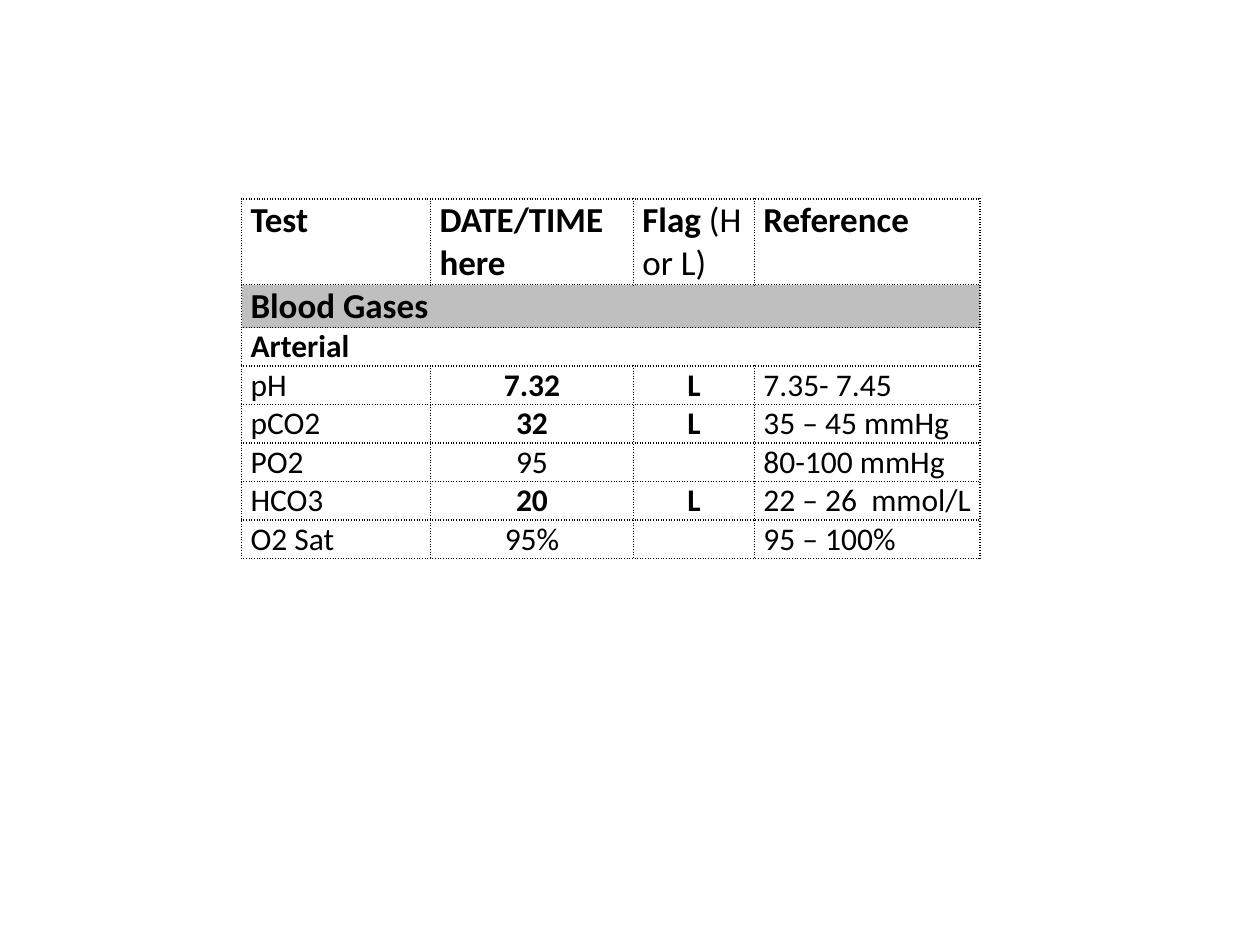
"""Build a slide with a table of arterial blood gas results."""
from lxml.etree import SubElement
from pptx import Presentation
from pptx.dml.color import RGBColor
from pptx.enum.text import PP_ALIGN
from pptx.oxml.ns import qn
from pptx.util import Cm, Pt

COLORS = {"text": "000000", "border": "000000", "header": "FFFFFF", "section": "BFBFBF"}
MARGINS = {"margin_left": Cm(0.18), "margin_right": Cm(0.18), "margin_top": 0, "margin_bottom": 0}
COL_WIDTHS = [3.81, 4.09, 2.44, 4.55]
ROW_HEIGHTS = [1.72, 0.86] + [0.77] * 6
ROWS = [
    ["Test", "DATE/TIME here", "Flag ", "Reference"],
    ["Blood Gases", "", "", ""],
    ["Arterial", "", "", ""],
    ["pH", "7.32", "L", "7.35- 7.45"],
    ["pCO2", "32", "L", "35 – 45 mmHg"],
    ["PO2", "95", "", "80-100 mmHg"],
    ["HCO3", "20", "L", "22 – 26  mmol/L"],
    ["O2 Sat", "95%", "", "95 – 100%"],
]


def add_run(p, text, size, bold):
    r = p.add_run()
    r.text = text
    font = {"name": "Calibri", "size": Pt(size), "bold": bold}
    for name, value in font.items():
        setattr(r.font, name, value)
    r.font.color.rgb = RGBColor.from_string(COLORS["text"])


def add_borders(cell):
    tcPr = cell._tc.get_or_add_tcPr()
    for side in ("lnL", "lnR", "lnT", "lnB"):
        ln = SubElement(tcPr, qn(f"a:{side}"), w=str(Pt(1)))
        fill = SubElement(ln, qn("a:solidFill"))
        SubElement(fill, qn("a:srgbClr"), val=COLORS["border"])
        SubElement(ln, qn("a:prstDash"), val="dot")


prs = Presentation()
prs.slide_width, prs.slide_height = Cm(25.4), Cm(19.05)
s = prs.slides.add_slide(prs.slide_layouts[6])

table = s.shapes.add_table(
    len(ROWS), len(COL_WIDTHS), Cm(4.87), Cm(4.01), Cm(sum(COL_WIDTHS)), Cm(sum(ROW_HEIGHTS))
).table
table.first_row = table.horz_banding = False
for column, width in zip(table.columns, COL_WIDTHS):
    column.width = Cm(width)
for row, height in zip(table.rows, ROW_HEIGHTS):
    row.height = Cm(height)

for i, values in enumerate(ROWS):
    size = 20 if i < 2 else 18
    abnormal = values[2] == "L"
    for j, text in enumerate(values):
        cell = table.cell(i, j)
        for name, value in MARGINS.items():
            setattr(cell, name, value)
        add_borders(cell)
        if i < 2:
            cell.fill.solid()
            cell.fill.fore_color.rgb = RGBColor.from_string(COLORS["section" if i else "header"])
        else:
            cell.fill.background()
        p = cell.text_frame.paragraphs[0]
        if i > 2 and j in (1, 2):
            p.alignment = PP_ALIGN.CENTER
        if text:
            add_run(p, text, size, i < 3 or (abnormal and j in (1, 2)))

add_run(table.cell(0, 2).text_frame.paragraphs[0], "(H or L)", 20, False)
for i in (1, 2):
    table.cell(i, 0).merge(table.cell(i, 3))

prs.save("out.pptx")
